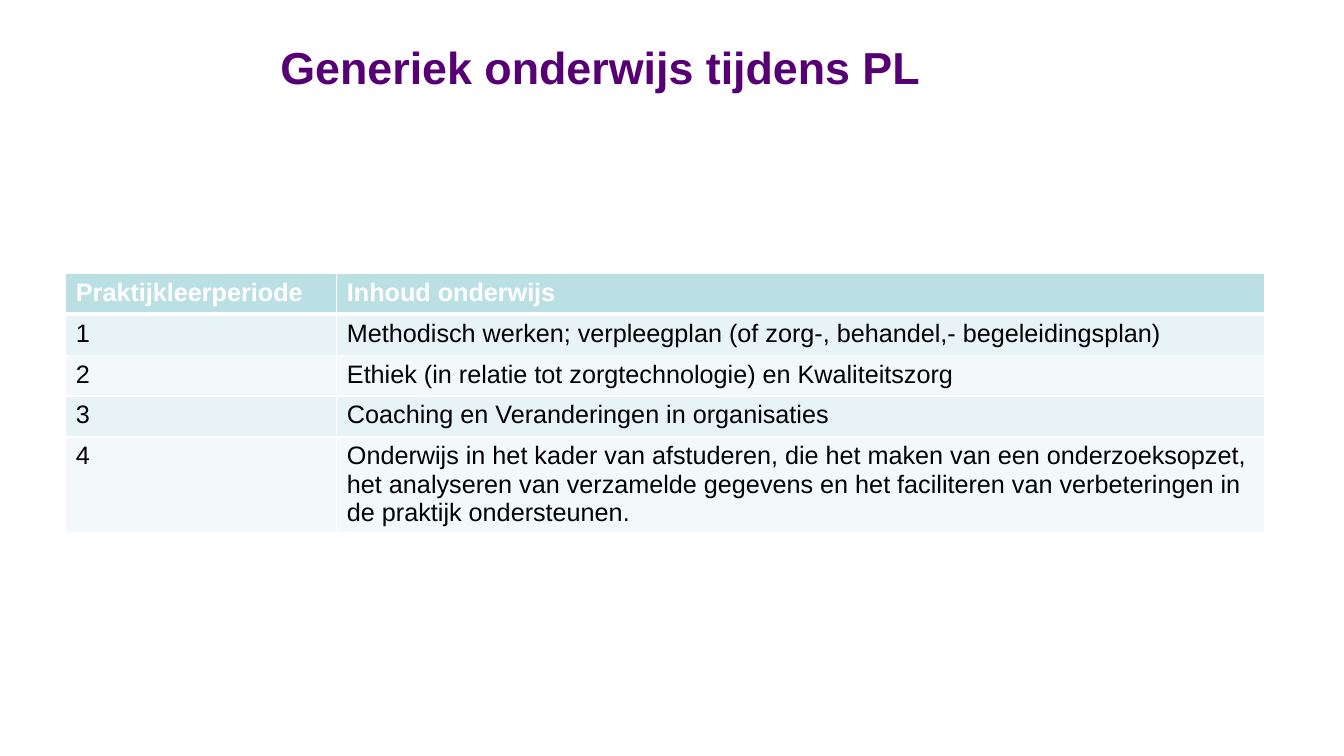
from lxml import etree
from pptx import Presentation
from pptx.dml.color import RGBColor
from pptx.enum.text import MSO_ANCHOR, PP_ALIGN
from pptx.oxml.ns import qn
from pptx.util import Cm, Pt

PURPLE = RGBColor(0x57, 0x00, 0x76)
WHITE = RGBColor(0xFF, 0xFF, 0xFF)
BLACK = RGBColor(0x00, 0x00, 0x00)
HEADER_TEAL = RGBColor(0xBB, 0xE0, 0xE3)
BAND_TEAL = RGBColor(0xE7, 0xF3, 0xF4)
BAND_PALE = RGBColor(0xF3, 0xF9, 0xFA)
LEFT, MIDDLE = PP_ALIGN.LEFT, MSO_ANCHOR.MIDDLE
FONT = "Arial"

PERIODS = [
    ("Praktijkleerperiode", "Inhoud onderwijs"),
    ("1", "Methodisch werken; verpleegplan (of zorg-, behandel,- begeleidingsplan)"),
    ("2", "Ethiek (in relatie tot zorgtechnologie) en Kwaliteitszorg"),
    ("3", "Coaching en Veranderingen in organisaties"),
    ("4", "Onderwijs in het kader van afstuderen, die het maken van een "
          "onderzoeksopzet, het analyseren van verzamelde gegevens en het "
          "faciliteren van verbeteringen in de praktijk ondersteunen."),
]
COLUMN_WIDTHS = [Cm(6.83), Cm(23.37)]
ROW_HEIGHTS = [Cm(1.03)] * 4 + [Cm(2.4)]


def style_text(paragraph, size, color, bold):
    paragraph.alignment = LEFT
    paragraph.font.name = FONT
    paragraph.font.size = Pt(size)
    paragraph.font.bold = bold
    paragraph.font.color.rgb = color


def add_border(cell, side, width):
    """Add one white border; call before the cell gets its fill."""
    line = etree.SubElement(cell._tc.get_or_add_tcPr(), qn(f"a:{side}"),
                            w=str(Pt(width)))
    fill = etree.SubElement(line, qn("a:solidFill"))
    etree.SubElement(fill, qn("a:srgbClr"), val=str(WHITE))


presentation = Presentation()
presentation.slide_width = Cm(33.87)
presentation.slide_height = Cm(19.05)
slide = presentation.slides.add_slide(presentation.slide_layouts[5])

# Title
title = slide.shapes.title
title.left, title.top, title.width, title.height = Cm(6.81), Cm(0.74), Cm(25.4), Cm(1.9)
title.text_frame.text = "Generiek onderwijs tijdens PL"
title.text_frame.vertical_anchor = MIDDLE
style_text(title.text_frame.paragraphs[0], 32, PURPLE, True)

# Table of learning periods
periods_table = slide.shapes.add_table(
    len(PERIODS), len(COLUMN_WIDTHS), Cm(1.66), Cm(6.89),
    sum(COLUMN_WIDTHS), sum(ROW_HEIGHTS)).table
for column, width in zip(periods_table.columns, COLUMN_WIDTHS):
    column.width = width
for row, height in zip(periods_table.rows, ROW_HEIGHTS):
    row.height = height

for row_index, texts in enumerate(PERIODS):
    is_header = row_index == 0
    band = BAND_TEAL if row_index % 2 else BAND_PALE
    # The rule between header and body is thicker
    borders = {"lnL": 1, "lnR": 1,
               "lnT": 3 if row_index == 1 else 1,
               "lnB": 3 if is_header else 1}
    for column_index, text in enumerate(texts):
        cell = periods_table.cell(row_index, column_index)
        cell.text = text
        for side, width in borders.items():
            add_border(cell, side, width)
        cell.fill.solid()
        cell.fill.fore_color.rgb = HEADER_TEAL if is_header else band
        style_text(cell.text_frame.paragraphs[0], 18,
                   WHITE if is_header else BLACK, is_header)

presentation.save("out.pptx")
